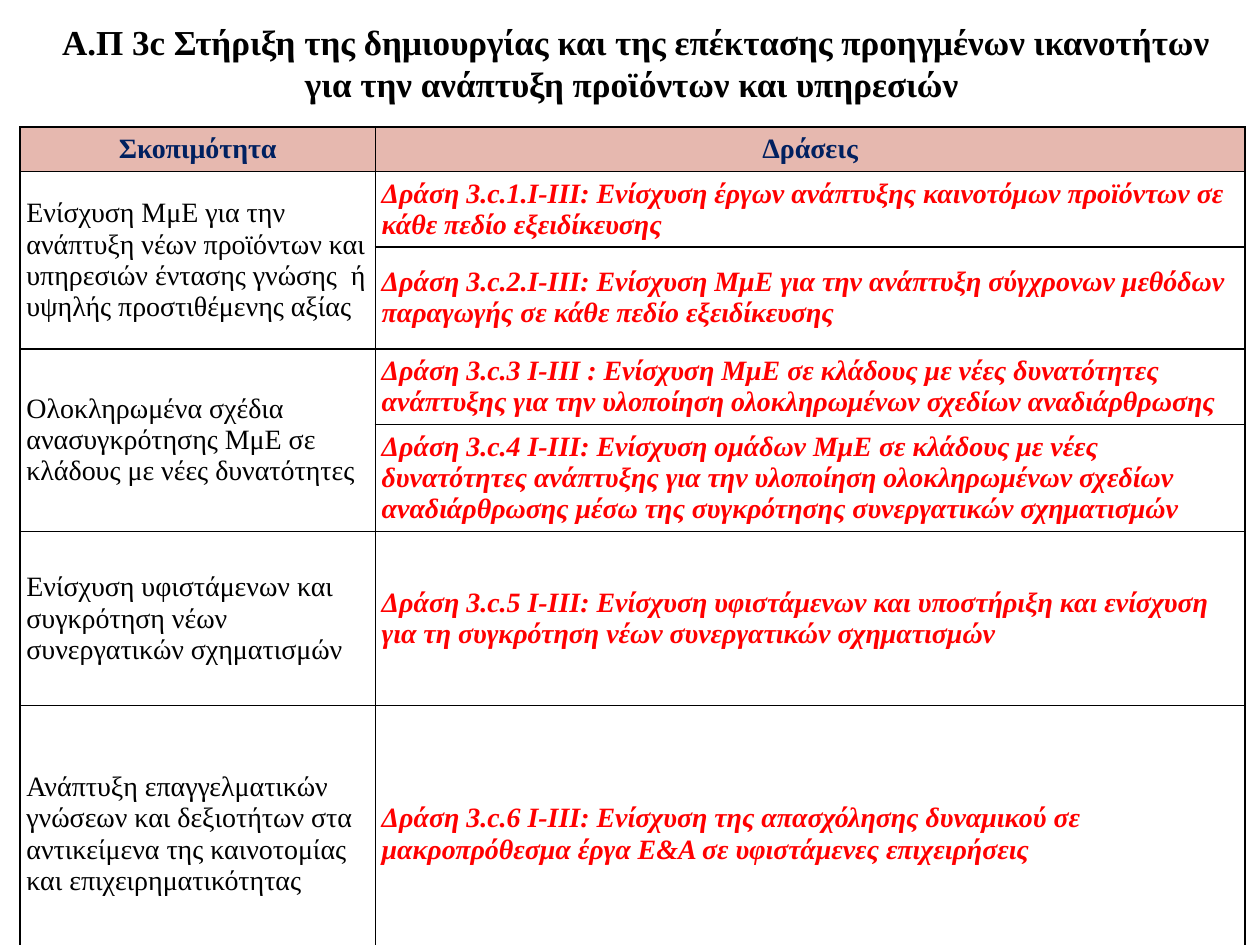
"""Build a slide with a heading and a table of aims and actions."""
from dataclasses import dataclass

from lxml.etree import SubElement as Sub
from pptx import Presentation
from pptx.dml.color import RGBColor as Rgb
from pptx.enum.text import MSO_ANCHOR as Anchor, PP_ALIGN as Align
from pptx.oxml.ns import qn
from pptx.util import Inches, Pt


@dataclass(frozen=True)
class Theme:
    font: str = "Times New Roman"
    title: int = 20
    body: int = 16
    ink: str = "000000"
    navy: str = "002060"
    red: str = "FF0000"
    rose: str = "E6B8AF"
    white: str = "FFFFFF"
    line: float = 1


THEME = Theme()
TITLE = ("Α.Π 3c Στήριξη της δημιουργίας και της επέκτασης προηγμένων "
         "ικανοτήτων για την ανάπτυξη προϊόντων και υπηρεσιών ")
HEADS = ("Σκοπιμότητα", "Δράσεις")
GROUPS = (
    ("Ενίσχυση ΜμΕ για την ανάπτυξη νέων προϊόντων και υπηρεσιών "
     "έντασης γνώσης  ή υψηλής προστιθέμενης αξίας",
     ("Δράση 3.c.1.Ι-ΙΙΙ: Ενίσχυση έργων ανάπτυξης καινοτόμων προϊόντων "
      "σε κάθε πεδίο εξειδίκευσης",
      "Δράση 3.c.2.Ι-ΙΙΙ: Ενίσχυση ΜμΕ για την ανάπτυξη σύγχρονων μεθόδων "
      "παραγωγής σε κάθε πεδίο εξειδίκευσης")),
    ("Ολοκληρωμένα σχέδια ανασυγκρότησης ΜμΕ σε κλάδους με νέες δυνατότητες",
     ("Δράση 3.c.3 Ι-ΙΙΙ : Ενίσχυση ΜμΕ σε κλάδους με νέες δυνατότητες "
      "ανάπτυξης για την υλοποίηση ολοκληρωμένων σχεδίων αναδιάρθρωσης",
      "Δράση 3.c.4 Ι-ΙΙΙ: Ενίσχυση ομάδων ΜμΕ σε κλάδους με νέες δυνατότητες "
      "ανάπτυξης για την υλοποίηση ολοκληρωμένων σχεδίων αναδιάρθρωσης "
      "μέσω της συγκρότησης συνεργατικών σχηματισμών")),
    ("Ενίσχυση υφιστάμενων και συγκρότηση νέων συνεργατικών σχηματισμών",
     ("Δράση 3.c.5 Ι-ΙΙΙ: Ενίσχυση υφιστάμενων και υποστήριξη και ενίσχυση "
      "για τη συγκρότηση νέων συνεργατικών σχηματισμών",)),
    ("Ανάπτυξη επαγγελματικών γνώσεων και δεξιοτήτων στα αντικείμενα "
     "της καινοτομίας και επιχειρηματικότητας",
     ("Δράση 3.c.6 Ι-ΙΙΙ: Ενίσχυση της απασχόλησης δυναμικού σε "
      "μακροπρόθεσμα έργα Ε&Α σε υφιστάμενες επιχειρήσεις",)),
)
COLS = (2.82, 6.9)
ROWS = (0.35, 0.6, 0.81, 0.6, 0.85, 1.38, 2.04)


def add_run(frame, text, size, color, bold=False, slant=False,
            align=Align.LEFT):
    """Write one styled run in the first paragraph of a frame."""
    para = frame.paragraphs[0]
    para.alignment = align
    run = para.add_run()
    run.text = text
    font = run.font
    font.name, font.size = THEME.font, Pt(size)
    font.bold, font.italic = bold, slant
    font.color.rgb = Rgb.from_string(color)


def add_title(slide):
    """Add the centred heading."""
    box = slide.shapes.add_textbox(
        Inches(0.35), Inches(0.11), Inches(9.4), Inches(0.77))
    box.text_frame.word_wrap = True
    add_run(box.text_frame, TITLE, THEME.title, THEME.ink, bold=True,
            align=Align.CENTER)


def style_cell(cell, fill, anchor):
    """Set the borders, fill, margins and anchor of a cell."""
    props = cell._tc.get_or_add_tcPr()
    for side in ("lnL", "lnR", "lnT", "lnB"):
        edge = Sub(props, qn(f"a:{side}"), w=str(int(Pt(THEME.line))))
        paint = Sub(edge, qn("a:solidFill"))
        Sub(paint, qn("a:srgbClr"), val=THEME.ink)
    cell.fill.solid()
    cell.fill.fore_color.rgb = Rgb.from_string(fill)
    cell.margin_left = cell.margin_right = Inches(0.05)
    cell.margin_top = cell.margin_bottom = Inches(0.05)
    cell.vertical_anchor = anchor


def add_grid(slide):
    """Add the empty table with its sizes and cell styles."""
    grid = slide.shapes.add_table(
        len(ROWS), len(COLS), Inches(0.16), Inches(1.01),
        Inches(sum(COLS)), Inches(sum(ROWS))).table
    for col, width in zip(grid.columns, COLS):
        col.width = Inches(width)
    for i, (row, height) in enumerate(zip(grid.rows, ROWS)):
        row.height = Inches(height)
        for cell in row.cells:
            style_cell(cell, THEME.white if i else THEME.rose,
                       Anchor.MIDDLE if i else Anchor.TOP)
    return grid


def fill_grid(grid):
    """Write the header and each aim beside its actions."""
    for col, head in enumerate(HEADS):
        add_run(grid.cell(0, col).text_frame, head, THEME.body, THEME.navy,
                bold=True, align=Align.CENTER)
    top = 1
    for aim, acts in GROUPS:
        cell = grid.cell(top, 0)
        if len(acts) > 1:
            cell.merge(grid.cell(top + len(acts) - 1, 0))
        add_run(cell.text_frame, aim, THEME.body, THEME.ink)
        for row, act in enumerate(acts, top):
            add_run(grid.cell(row, 1).text_frame, act, THEME.body, THEME.red,
                    bold=True, slant=True)
        top += len(acts)


def main():
    """Build and save the slide."""
    deck = Presentation()
    deck.slide_width, deck.slide_height = Inches(10), Inches(7.5)
    slide = deck.slides.add_slide(deck.slide_layouts[6])
    fill_grid(add_grid(slide))
    add_title(slide)
    deck.save("out.pptx")


if __name__ == "__main__":
    main()
